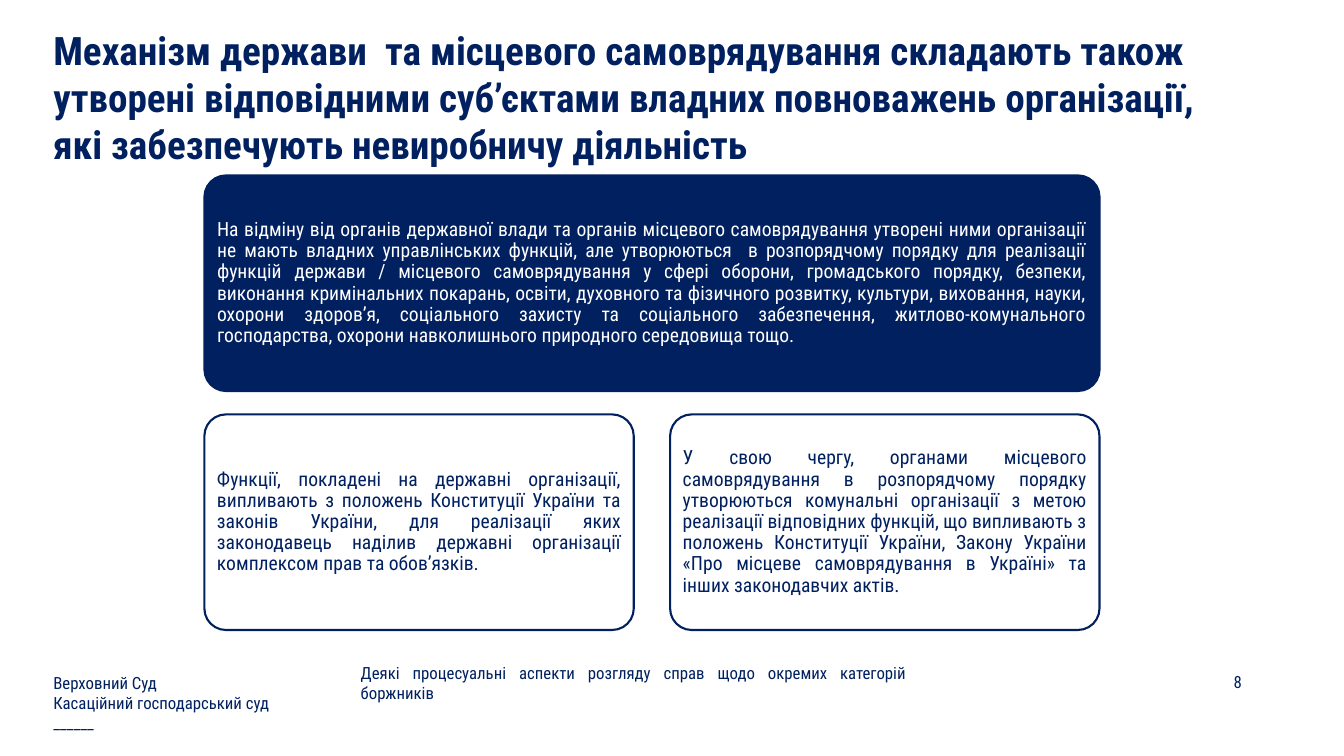
import pptx
import pptx.dml.color
import pptx.enum.shapes
import pptx.enum.text
import pptx.util
from dataclasses import dataclass

Pt = pptx.util.Pt
RGB = pptx.dml.color.RGBColor
ALIGN = pptx.enum.text.PP_ALIGN
ANCHOR = pptx.enum.text.MSO_ANCHOR


@dataclass(frozen=True)
class Theme:
    font: str = "Roboto Condensed"
    navy: RGB = RGB(0x00, 0x20, 0x60)
    white: RGB = RGB(0xFF, 0xFF, 0xFF)
    title_size: int = 28
    body_size: int = 14
    footer_size: int = 12


THEME = Theme()

TITLE = (
    "Механізм держави  та місцевого самоврядування складають також утворені "
    "відповідними суб’єктами владних повноважень організації, які забезпечують "
    "невиробничу діяльність"
)
DIFFERENCE = (
    "На відміну від органів державної влади та органів місцевого самоврядування "
    "утворені ними організації не мають владних управлінських функцій, але "
    "утворюються  в розпорядчому порядку для реалізації функцій держави / місцевого "
    "самоврядування у сфері оборони, громадського порядку, безпеки, виконання "
    "кримінальних покарань, освіти, духовного та фізичного розвитку, культури, "
    "виховання, науки, охорони здоров’я, соціального захисту та соціального "
    "забезпечення, житлово-комунального господарства, охорони навколишнього "
    "природного середовища тощо."
)
STATE_BODIES = (
    "Функції, покладені на державні організації, випливають з положень Конституції "
    "України та законів України, для реалізації яких законодавець наділив державні "
    "організації комплексом прав та обов’язків."
)
MUNICIPAL_BODIES = (
    "У свою чергу, органами місцевого самоврядування в розпорядчому порядку "
    "утворюються комунальні організації з метою реалізації відповідних функцій, що "
    "випливають з положень Конституції України, Закону України «Про місцеве "
    "самоврядування в Україні» та інших законодавчих актів."
)
COURT = ["Верховний Суд", "Касаційний господарський суд", "______"]
TOPIC = "Деякі процесуальні аспекти розгляду справ щодо окремих категорій боржників"

CARD_LEFT, CARD_TOP = 146, 125.3
CARD_WIDTH, CARD_HEIGHT = 639.4, 154
COLUMN_GAP, ROW_GAP = 26, 16.7
CARD_INSET = 4.5
FOOTER_TOP = 475.2


def apply(target, values):
    for name, value in values.items():
        setattr(target, name, value)


def write(frame, lines, size, color, align=ALIGN.LEFT, bold=False, spacing=1.0):
    for index, line in enumerate(lines):
        paragraph = frame.paragraphs[0] if index == 0 else frame.add_paragraph()
        apply(paragraph, {"alignment": align, "line_spacing": spacing})
        run = paragraph.add_run()
        run.text = line
        apply(run.font, {"name": THEME.font, "size": Pt(size), "bold": bold})
        run.font.color.rgb = color


def add_label(slide, box, lines, size, anchor=ANCHOR.MIDDLE, **style):
    frame = slide.shapes.add_textbox(*map(Pt, box)).text_frame
    apply(frame, {"word_wrap": True, "vertical_anchor": anchor})
    write(frame, lines, size, THEME.navy, **style)


def add_card(slide, box, text, fill, ink):
    card = slide.shapes.add_shape(
        pptx.enum.shapes.MSO_SHAPE.ROUNDED_RECTANGLE, *map(Pt, box)
    )
    card.adjustments[0] = 0.1
    card.shadow.inherit = False
    card.fill.solid()
    card.fill.fore_color.rgb = fill
    card.line.color.rgb = THEME.navy
    card.line.width = Pt(1.5)
    frame = card.text_frame
    apply(frame, {"word_wrap": True, "vertical_anchor": ANCHOR.MIDDLE})
    sides = ("left", "top", "right", "bottom")
    apply(frame, {f"margin_{side}": Pt(CARD_INSET) for side in sides})
    write(frame, [text], THEME.body_size, ink, align=ALIGN.JUSTIFY, spacing=0.9)


def add_cards(slide):
    add_card(slide, (CARD_LEFT, CARD_TOP, CARD_WIDTH, CARD_HEIGHT),
             DIFFERENCE, THEME.navy, THEME.white)
    column_width = (CARD_WIDTH - COLUMN_GAP) / 2
    lower_top = CARD_TOP + CARD_HEIGHT + ROW_GAP
    for column, text in enumerate([STATE_BODIES, MUNICIPAL_BODIES]):
        left = CARD_LEFT + column * (column_width + COLUMN_GAP)
        add_card(slide, (left, lower_top, column_width, CARD_HEIGHT),
                 text, THEME.white, THEME.navy)


def add_footer(slide):
    for left, width, height, lines, align in [
        (678.2, 216, 23.8, ["8"], ALIGN.RIGHT),
        (31, 183, 54, COURT, ALIGN.LEFT),
        (250.6, 404, 25.2, [TOPIC], ALIGN.JUSTIFY),
    ]:
        add_label(slide, (left, FOOTER_TOP, width, height), lines,
                  THEME.footer_size, align=align)


def main():
    deck = pptx.Presentation()
    apply(deck, {"slide_width": Pt(960), "slide_height": Pt(540)})
    slide = deck.slides.add_slide(deck.slide_layouts[6])
    add_footer(slide)
    add_cards(slide)
    add_label(slide, (31, 15.1, 863.3, 108.7), [TITLE], THEME.title_size,
              anchor=ANCHOR.TOP, bold=True)
    deck.save("out.pptx")


if __name__ == "__main__":
    main()
